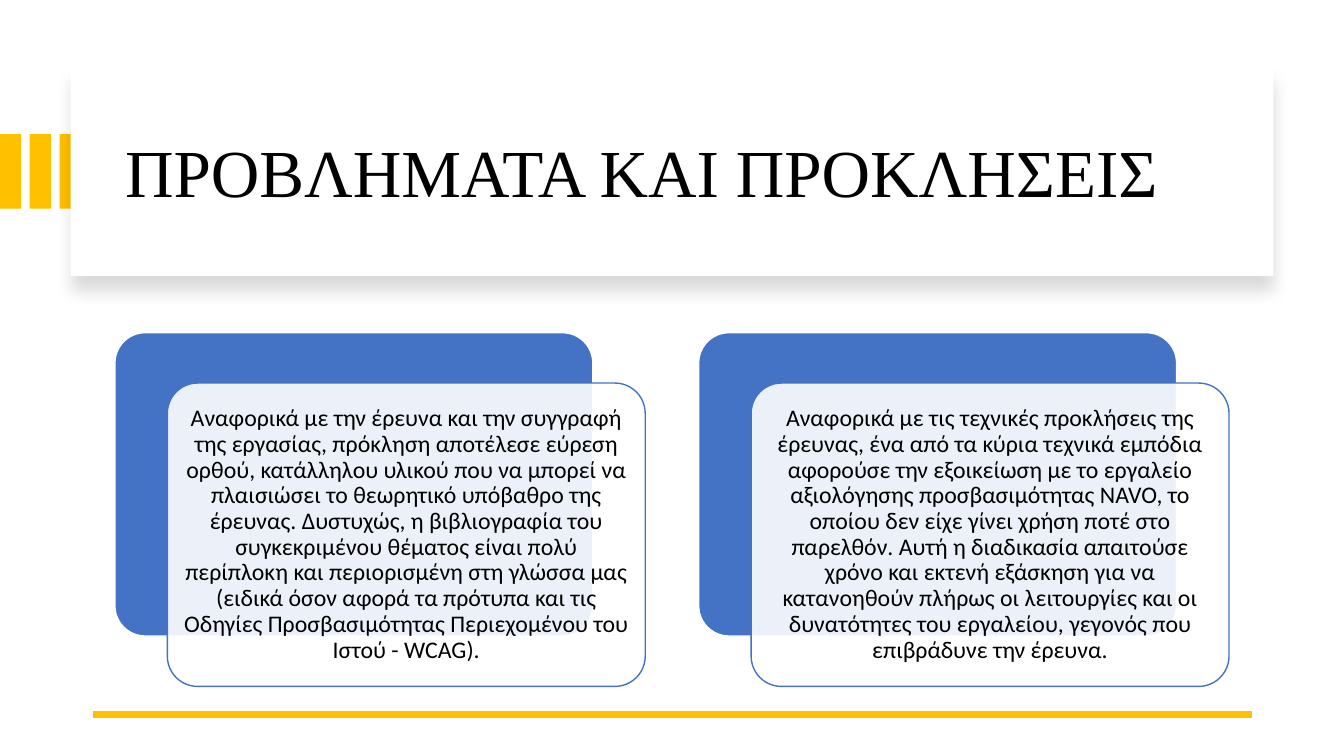
import pptx
import pptx.util
import pptx.dml.color
import pptx.enum.shapes
import pptx.enum.text
import pptx.oxml
import pptx.oxml.ns

Inches = pptx.util.Inches
Pt = pptx.util.Pt
RGBColor = pptx.dml.color.RGBColor
SHAPE = pptx.enum.shapes.MSO_SHAPE
ALIGN = pptx.enum.text.PP_ALIGN
qn = pptx.oxml.ns.qn

GOLD = RGBColor(0xFF, 0xC0, 0x00)
BLUE = RGBColor(0x44, 0x72, 0xC4)
WHITE = RGBColor(0xFF, 0xFF, 0xFF)
BLACK = RGBColor(0x00, 0x00, 0x00)

TITLE_FORMAT = {"name": "Times New Roman", "size": Pt(48)}
CARD_FORMAT = {"name": "Calibri", "size": Pt(17)}

CARD_TEXTS = [
    "Αναφορικά με την έρευνα και την συγγραφή της εργασίας, πρόκληση αποτέλεσε "
    "εύρεση ορθού, κατάλληλου υλικού που να μπορεί να πλαισιώσει το θεωρητικό "
    "υπόβαθρο της έρευνας. Δυστυχώς, η βιβλιογραφία του συγκεκριμένου θέματος είναι "
    "πολύ περίπλοκη και περιορισμένη στη γλώσσα μας (ειδικά όσον αφορά τα πρότυπα "
    "και τις Οδηγίες Προσβασιμότητας Περιεχομένου του Ιστού - WCAG).",
    "Αναφορικά με τις τεχνικές προκλήσεις της έρευνας, ένα από τα κύρια τεχνικά "
    "εμπόδια αφορούσε την εξοικείωση με το εργαλείο αξιολόγησης προσβασιμότητας "
    "NAVO, το οποίου δεν είχε γίνει χρήση ποτέ στο παρελθόν. Αυτή η διαδικασία "
    "απαιτούσε χρόνο και εκτενή εξάσκηση για να κατανοηθούν πλήρως οι λειτουργίες "
    "και οι δυνατότητες του εργαλείου, γεγονός που επιβράδυνε την έρευνα.",
]


def add_block(slide, kind, left, top, width, height, fill, line=None):
    """Add a flat shape, placed in inches, outlined only when a line colour is given."""
    block = slide.shapes.add_shape(
        kind, Inches(left), Inches(top), Inches(width), Inches(height))
    block.shadow.inherit = False
    block.fill.solid()
    block.fill.fore_color.rgb = fill
    if line is None:
        block.line.fill.background()
    else:
        block.line.color.rgb = line
        block.line.width = Pt(1)
    if kind == SHAPE.ROUNDED_RECTANGLE:
        block.adjustments[0] = 0.1
    return block


def write_text(frame, text, font_format, alignment):
    frame.word_wrap = True
    frame.vertical_anchor = pptx.enum.text.MSO_ANCHOR.MIDDLE
    para = frame.paragraphs[0]
    para.alignment = alignment
    para.line_spacing = 0.9
    span = para.add_run()
    span.text = text
    span.font.color.rgb = BLACK
    for name, value in font_format.items():
        setattr(span.font, name, value)


deck = pptx.Presentation()
deck.slide_width = Inches(13.33)
deck.slide_height = Inches(7.5)
slide = deck.slides.add_slide(deck.slide_layouts[5])

# Gold bars and title panel
for index in range(3):
    add_block(slide, SHAPE.RECTANGLE, index * 0.295, 1.33, 0.21, 0.74, GOLD)

panel = add_block(slide, SHAPE.RECTANGLE, 0.7, 0.67, 11.93, 2.07, WHITE)
panel_shadow = pptx.oxml.parse_xml(
    f'<a:outerShdw {pptx.oxml.ns.nsdecls("a")} blurRad="{Pt(11)}" dist="{Pt(10)}" '
    'dir="5400000" algn="t" rotWithShape="0">'
    '<a:srgbClr val="000000"><a:alpha val="15000"/></a:srgbClr></a:outerShdw>')
panel.element.spPr.find(qn("a:effectLst")).append(panel_shadow)

title = slide.shapes.title
title.left, title.top = Inches(1.14), Inches(0.89)
title.width, title.height = Inches(11.13), Inches(1.7)
write_text(title.text_frame, "ΠΡΟΒΛΗΜΑΤΑ ΚΑΙ ΠΡΟΚΛΗΣΕΙΣ", TITLE_FORMAT, ALIGN.LEFT)
slide.shapes.element.append(title.element)  # bring the title in front of its panel

# Gold rule at the foot
rule = slide.shapes.add_connector(
    pptx.enum.shapes.MSO_CONNECTOR.STRAIGHT,
    Inches(12.42), Inches(7.09), Inches(0.92), Inches(7.09))
rule.line.color.rgb = GOLD
rule.line.width = Pt(4.5)
rule.element.spPr.append(pptx.oxml.parse_xml(
    f'<a:effectLst {pptx.oxml.ns.nsdecls("a")}/>'))

# Cards, each over an offset blue backing
for index, text in enumerate(CARD_TEXTS):
    left = 1.14 + index * 5.79
    add_block(slide, SHAPE.ROUNDED_RECTANGLE, left, 3.3, 4.74, 3.01, BLUE, WHITE)
    card = add_block(
        slide, SHAPE.ROUNDED_RECTANGLE, left + 0.52, 3.8, 4.74, 3.01, WHITE, BLUE)
    card_color = card.element.spPr.find(qn("a:solidFill")).find(qn("a:srgbClr"))
    card_color.append(pptx.oxml.parse_xml(
        f'<a:alpha {pptx.oxml.ns.nsdecls("a")} val="90000"/>'))
    frame = card.text_frame
    for side in ("left", "top", "right", "bottom"):
        setattr(frame, f"margin_{side}", Inches(0.07))
    write_text(frame, text, CARD_FORMAT, ALIGN.CENTER)

deck.save("out.pptx")
